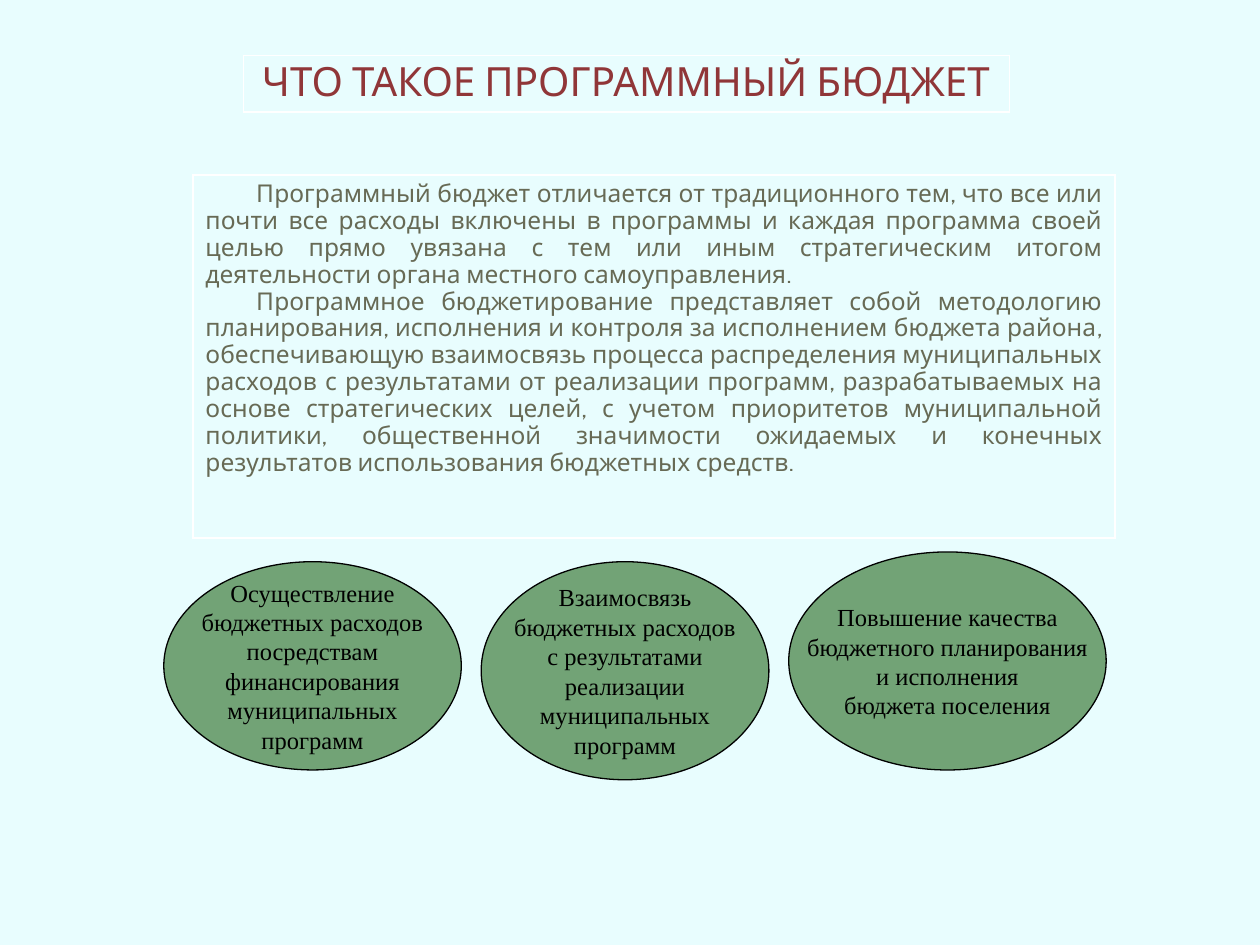
from pptx import Presentation
from pptx.dml.color import RGBColor
from pptx.enum import shapes, text
from pptx.util import Pt

ALIGN = text.PP_ALIGN


def rgb(value):
    return RGBColor.from_string(value)


def write(frame, lines, align, color, **font_values):
    """Put one paragraph per line into the frame, all formatted alike."""
    frame.text = "\n".join(lines)
    for paragraph in frame.paragraphs:
        paragraph.alignment = align
        for run in paragraph.runs:
            run.font.color.rgb = rgb(color)
            for name, value in font_values.items():
                setattr(run.font, name, value)


prs = Presentation()
prs.slide_width, prs.slide_height = Pt(720), Pt(540)
slide = prs.slides.add_slide(prs.slide_layouts[6])
slide.background.fill.solid()
slide.background.fill.fore_color.rgb = rgb("E8FDFE")

heading = ["ЧТО ТАКОЕ ПРОГРАММНЫЙ БЮДЖЕТ"]
explanation = [
    "Программный бюджет отличается от традиционного тем, что все или почти все "
    "расходы включены в программы и каждая программа своей целью прямо увязана "
    "с тем или иным стратегическим итогом деятельности органа местного "
    "самоуправления.",
    "Программное бюджетирование представляет собой методологию планирования, "
    "исполнения и контроля за исполнением бюджета района, обеспечивающую "
    "взаимосвязь процесса распределения муниципальных расходов с результатами "
    "от реализации программ, разрабатываемых на основе стратегических целей, "
    "с учетом приоритетов муниципальной политики, общественной значимости "
    "ожидаемых и конечных результатов использования бюджетных средств.",
]

# Single-cell tables: left, top, width, height, lines, align, colour, size, indent
tables = [
    (139, 31.7, 437.8, 29.5, heading, ALIGN.CENTER, "903638", 23, 0),
    (110.2, 100, 527, 207.4, explanation, ALIGN.JUSTIFY, "676A55", 14, 29),
]
for left, top, width, height, lines, align, color, size, indent in tables:
    table = slide.shapes.add_table(
        1, 1, Pt(left), Pt(top), Pt(width), Pt(height)).table
    table.first_row = table.horz_banding = False
    cell = table.cell(0, 0)
    cell.fill.background()
    write(cell.text_frame, lines, align, color, name="Cabin", size=Pt(size))
    for paragraph in cell.text_frame.paragraphs:
        paragraph.line_spacing = 0.9
        if indent:
            properties = paragraph._p.get_or_add_pPr()
            properties.set("marL", "0")
            properties.set("indent", str(Pt(indent)))

# Benefits: left, top, width, height, lines
benefits = [
    (93.6, 321, 170, 119, ["Осуществление", "бюджетных расходов", "посредствам",
                           "финансирования", "муниципальных", "программ"]),
    (275, 321, 164.4, 124.6, ["Взаимосвязь", "бюджетных расходов",
                              "с результатами", "реализации",
                              "муниципальных", "программ"]),
    (450.7, 315.4, 181.4, 124.6, ["Повышение качества",
                                  "бюджетного планирования",
                                  "и исполнения", "бюджета поселения"]),
]
for left, top, width, height, lines in benefits:
    oval = slide.shapes.add_shape(
        shapes.MSO_SHAPE.OVAL, Pt(left), Pt(top), Pt(width), Pt(height))
    oval.shadow.inherit = False
    oval.fill.solid()
    oval.fill.fore_color.rgb = rgb("72A376")
    oval.line.color.rgb = rgb("000000")
    oval.line.width = Pt(0.75)
    oval.text_frame.word_wrap = False
    oval.text_frame.vertical_anchor = text.MSO_ANCHOR.MIDDLE
    write(oval.text_frame, lines, ALIGN.CENTER, "000000",
          name="Times New Roman", size=Pt(14))

prs.save("out.pptx")
